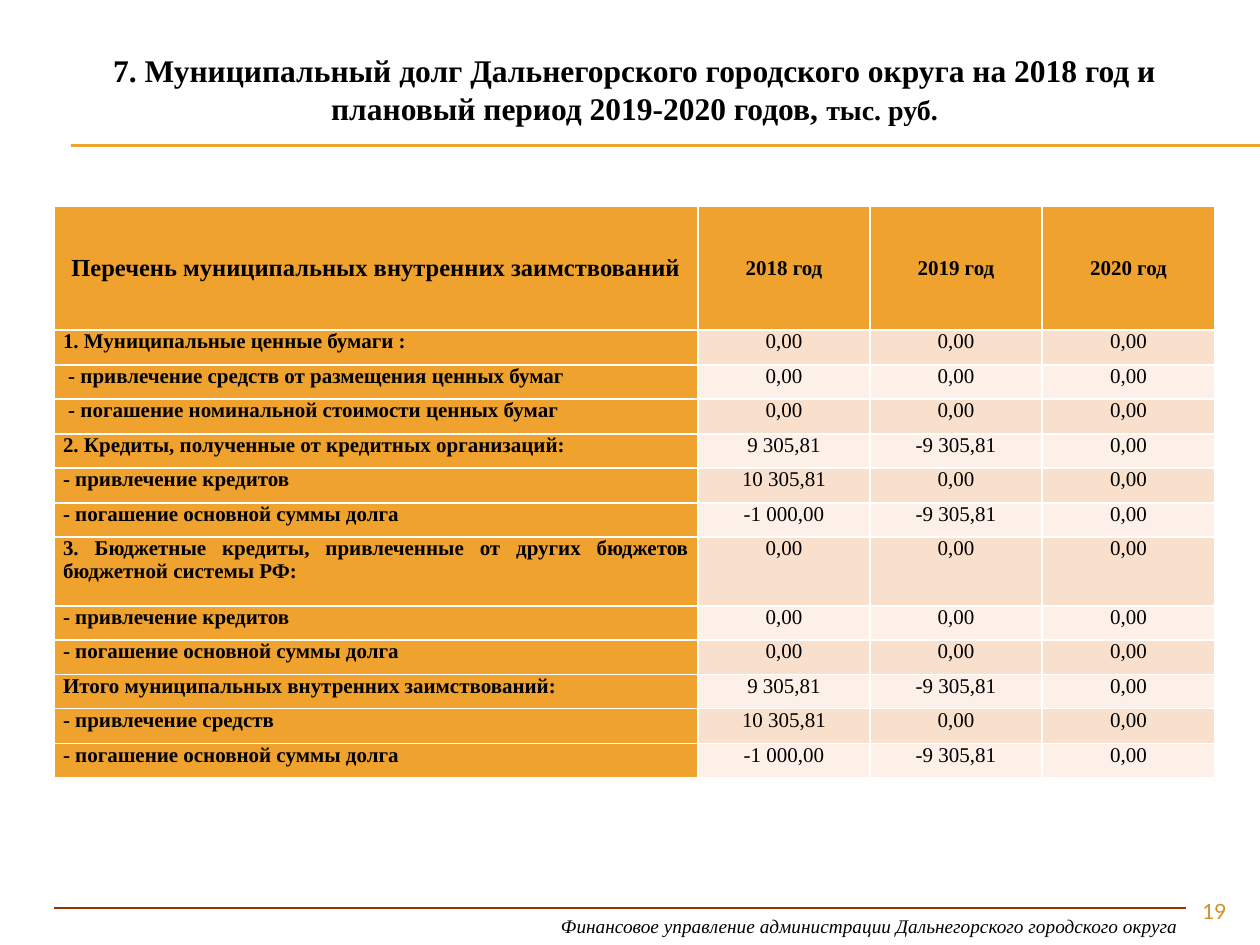
from pptx import Presentation
from pptx.dml.color import RGBColor
from pptx.enum.shapes import MSO_CONNECTOR
from pptx.enum.text import MSO_ANCHOR, PP_ALIGN
from pptx.oxml.ns import qn
from pptx.util import Pt
from lxml.etree import SubElement

SERIF = "Times New Roman"
BLACK, ORANGE = "000000", "F0A22E"
BANDS = "F9E0CD", "FCF0E8"
COLUMN_WIDTHS = 644, 172, 172, 173
HEADINGS = "Перечень муниципальных внутренних заимствований", "2018 год", "2019 год", "2020 год"
ZERO = "0,00"
NO_DEBT = (ZERO, ZERO, ZERO)
BALANCE = ("9 305,81", "-9 305,81", ZERO)
RAISED = ("10 305,81", ZERO, ZERO)
REPAID = ("-1 000,00", "-9 305,81", ZERO)
BUDGET_LOANS = "3. Бюджетные кредиты, привлеченные от других бюджетов бюджетной системы РФ:"
BORROWINGS = [
    ("1. Муниципальные ценные бумаги :", NO_DEBT),
    (" - привлечение средств от размещения ценных бумаг", NO_DEBT),
    (" - погашение номинальной стоимости ценных бумаг", NO_DEBT),
    ("2. Кредиты, полученные от кредитных организаций:", BALANCE),
    ("- привлечение кредитов", RAISED),
    ("- погашение основной суммы долга", REPAID),
    (BUDGET_LOANS, NO_DEBT),
    ("- привлечение кредитов", NO_DEBT),
    ("- погашение основной суммы долга", NO_DEBT),
    ("Итого муниципальных внутренних заимствований:", BALANCE),
    ("- привлечение средств", RAISED),
    ("- погашение основной суммы долга", REPAID),
]


def px(length):
    """Turn pixels into EMU."""
    return round(length * 914400 / 126)


def color(value):
    """Turn a hex string into a colour."""
    return RGBColor.from_string(value)


class SlideBuilder:
    """Holds the style and the current slide."""

    def __init__(self, slide, font=SERIF):
        """Keep the slide and its main font."""
        self.slide = slide
        self.font = font

    def style(self, paragraph, size, align, bold=False, italic=False, ink=BLACK, font=None):
        """Set the font and alignment of a paragraph."""
        paragraph.alignment = align
        face = paragraph.font
        face.name, face.size = font or self.font, Pt(size)
        face.bold, face.italic = bold, italic
        face.color.rgb = color(ink)

    def line(self, start, end, ink, width):
        """Draw a straight line without a shadow."""
        rule = self.slide.shapes.add_connector(MSO_CONNECTOR.STRAIGHT, *map(px, start + end))
        rule.line.color.rgb = color(ink)
        rule.line.width = Pt(width)
        SubElement(rule._element.spPr, qn("a:effectLst"))

    def text(self, box, wording, size, align, **look):
        """Add a wrapped text box and return its paragraph."""
        frame = self.slide.shapes.add_textbox(*map(px, box)).text_frame
        frame.word_wrap = True
        paragraph = frame.paragraphs[0]
        paragraph.add_run().text = wording
        self.style(paragraph, size, align, **look)
        return paragraph

    def cell(self, cell, wording, fill, size, align, bold, anchor=MSO_ANCHOR.TOP):
        """Fill one table cell."""
        cell.text = wording
        cell.fill.solid()
        cell.fill.fore_color.rgb = color(fill)
        cell.margin_left = cell.margin_right = px(9)
        cell.margin_top = cell.margin_bottom = 0
        cell.vertical_anchor = anchor
        self.style(cell.text_frame.paragraphs[0], size, align, bold)

    def table(self, left, top, widths, heights, headings, rows):
        """Add a table with a header row and banded values."""
        box = left, top, sum(widths), sum(heights)
        table = self.slide.shapes.add_table(len(heights), len(widths), *map(px, box)).table
        for column, width in zip(table.columns, widths):
            column.width = px(width)
        for row, height in zip(table.rows, heights):
            row.height = px(height)
        for index, heading in enumerate(headings):
            self.cell(table.cell(0, index), heading, ORANGE, 12 if index else 14,
                      PP_ALIGN.CENTER, True, MSO_ANCHOR.MIDDLE)
        for number, (label, values) in enumerate(rows, 1):
            self.cell(table.cell(number, 0), label, ORANGE, 12, PP_ALIGN.JUSTIFY, True)
            for index, value in enumerate(values, 1):
                self.cell(table.cell(number, index), value, BANDS[(number - 1) % 2], 12,
                          PP_ALIGN.CENTER, False)


def main():
    """Build and save the slide."""
    deck = Presentation()
    deck.slide_width, deck.slide_height = px(1260), px(945)
    page = SlideBuilder(deck.slides.add_slide(deck.slide_layouts[6]))

    for y in (145, 146):
        page.line((71, y), (1260, y), ORANGE, 0.75)
    page.line((54, 908), (1186, 908), "993300", 0.79)
    page.text((512, 908, 678, 37), "Финансовое управление администрации Дальнегорского городского округа",
              11, PP_ALIGN.RIGHT, italic=True)

    title = page.text((84, 45, 1101, 127),
                      "7. Муниципальный долг Дальнегорского городского округа на 2018 год и "
                      "плановый период 2019-2020 годов, ", 18, PP_ALIGN.CENTER, bold=True)
    unit = title.add_run()
    unit.text = "тыс. руб."
    unit.font.size = Pt(16)

    heights = [124] + [69 if label == BUDGET_LOANS else 35 - index % 2
                       for index, (label, _) in enumerate(BORROWINGS)]
    page.table(54, 206, COLUMN_WIDTHS, heights, HEADINGS, BORROWINGS)
    page.text((1134, 892, 105, 34), "19", 12, PP_ALIGN.RIGHT, ink="D48F29", font="Lato")
    deck.save("out.pptx")


if __name__ == "__main__":
    main()
